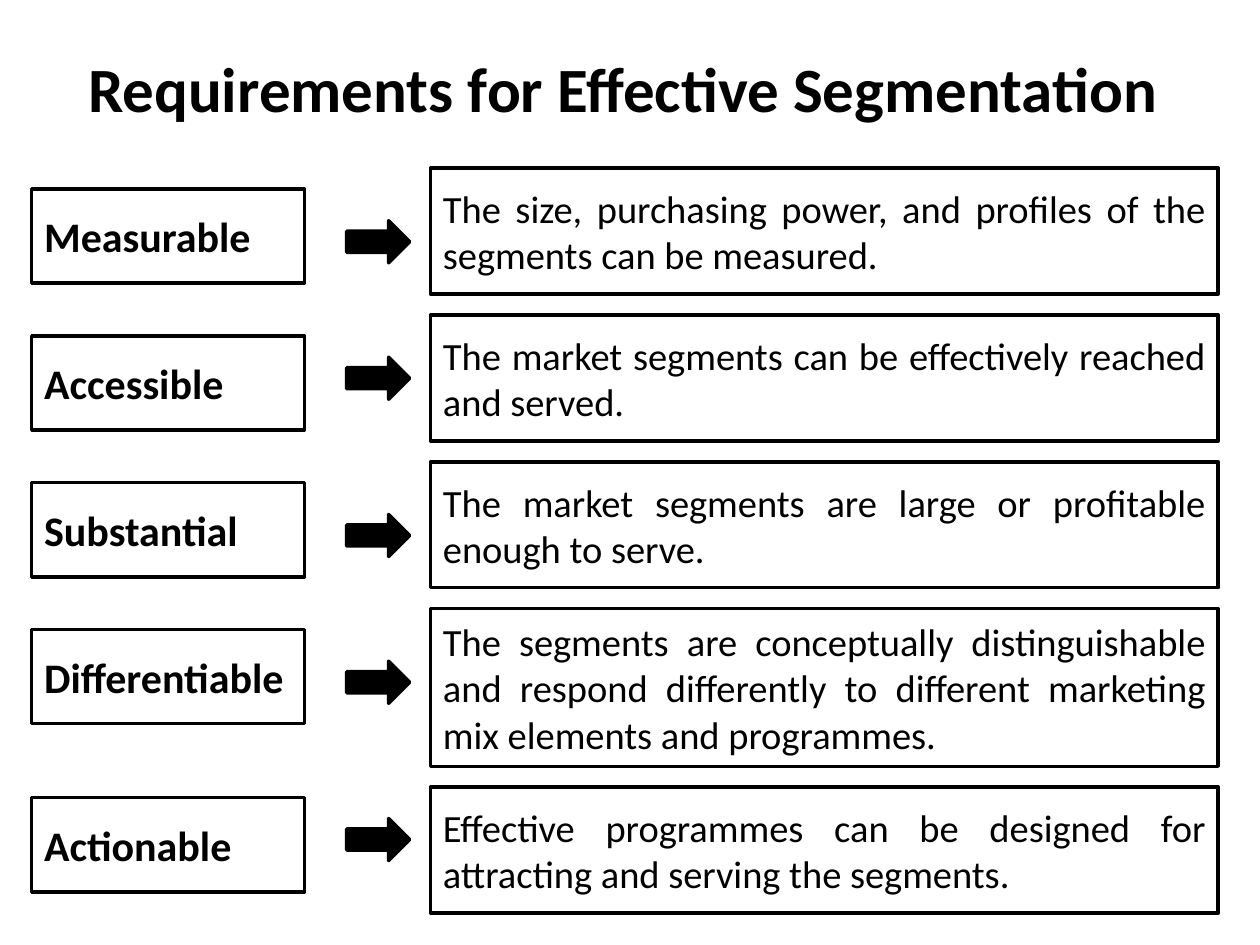
from dataclasses import dataclass

from pptx import Presentation
from pptx.dml.color import RGBColor
from pptx.enum.shapes import MSO_SHAPE
from pptx.enum.text import MSO_ANCHOR, PP_ALIGN
from pptx.shapes.autoshape import Shape
from pptx.slide import Slide
from pptx.util import Cm, Pt

RECTANGLE = MSO_SHAPE.RECTANGLE
RIGHT_ARROW = MSO_SHAPE.RIGHT_ARROW
MIDDLE = MSO_ANCHOR.MIDDLE
CENTER = PP_ALIGN.CENTER
JUSTIFY = PP_ALIGN.JUSTIFY

BLACK = "000000"
WHITE = "FFFFFF"
FONT = "Calibri"

TITLE_ONLY_LAYOUT = 5
FIRST_ROW_TOP = 3.39
ROW_GAP = 0.42
LABEL_LEFT, LABEL_WIDTH, LABEL_HEIGHT = 0.64, 5.5, 1.9
ARROW_LEFT, ARROW_WIDTH, ARROW_HEIGHT = 6.99, 1.27, 0.85
DESCRIPTION_LEFT, DESCRIPTION_WIDTH = 8.68, 15.88


@dataclass(frozen=True)
class Requirement:
    """A row of the slide; offsets and height are in centimetres."""
    label: str
    description: str
    height: float = 2.54
    label_offset: float = 0.42
    arrow_offset: float = 1.06


REQUIREMENTS = [
    Requirement("Measurable", "The size, purchasing power, and profiles of the "
                "segments can be measured."),
    Requirement("Accessible", "The market segments can be effectively reached "
                "and served.", arrow_offset=0.85),
    Requirement("Substantial", "The market segments are large or profitable "
                "enough to serve."),
    Requirement("Differentiable", "The segments are conceptually distinguishable "
                "and respond differently to different marketing mix elements "
                "and programmes.", height=3.18),
    Requirement("Actionable", "Effective programmes can be designed for "
                "attracting and serving the segments.",
                label_offset=0.21, arrow_offset=0.63),
]


def color(value: str) -> RGBColor:
    return RGBColor.from_string(value)


def write_text(shape: Shape, text: str, *, size: float, bold: bool = False,
               align: PP_ALIGN = JUSTIFY) -> None:
    frame = shape.text_frame
    frame.word_wrap = True
    frame.vertical_anchor = MIDDLE
    paragraph = frame.paragraphs[0]
    paragraph.alignment = align
    run = paragraph.add_run()
    run.text = text
    run.font.name = FONT
    run.font.size = Pt(size)
    run.font.bold = bold
    run.font.color.rgb = color(BLACK)


def add_outlined_shape(slide: Slide, kind: MSO_SHAPE, left: float, top: float,
                       width: float, height: float, fill: str = WHITE) -> Shape:
    shape = slide.shapes.add_shape(kind, Cm(left), Cm(top), Cm(width), Cm(height))
    shape.shadow.inherit = False
    shape.fill.solid()
    shape.fill.fore_color.rgb = color(fill)
    shape.line.color.rgb = color(BLACK)
    shape.line.width = Pt(2)
    return shape


def add_requirement(slide: Slide, requirement: Requirement, top: float) -> None:
    label = add_outlined_shape(slide, RECTANGLE, LABEL_LEFT,
                               top + requirement.label_offset,
                               LABEL_WIDTH, LABEL_HEIGHT)
    write_text(label, requirement.label, size=24, bold=True)
    add_outlined_shape(slide, RIGHT_ARROW, ARROW_LEFT,
                       top + requirement.arrow_offset,
                       ARROW_WIDTH, ARROW_HEIGHT, fill=BLACK)
    description = add_outlined_shape(slide, RECTANGLE, DESCRIPTION_LEFT, top,
                                     DESCRIPTION_WIDTH, requirement.height)
    write_text(description, requirement.description, size=22)


def main() -> None:
    presentation = Presentation()
    presentation.slide_width = Cm(25.4)
    presentation.slide_height = Cm(19.05)
    slide = presentation.slides.add_slide(
        presentation.slide_layouts[TITLE_ONLY_LAYOUT])

    title = slide.shapes.title
    title.left, title.top = Cm(1.27), Cm(0.76)
    title.width, title.height = Cm(22.86), Cm(1.98)
    write_text(title, "Requirements for Effective Segmentation ",
               size=36, bold=True, align=CENTER)

    top = FIRST_ROW_TOP
    for requirement in REQUIREMENTS:
        add_requirement(slide, requirement, top)
        top += requirement.height + ROW_GAP

    presentation.save("out.pptx")


if __name__ == "__main__":
    main()
